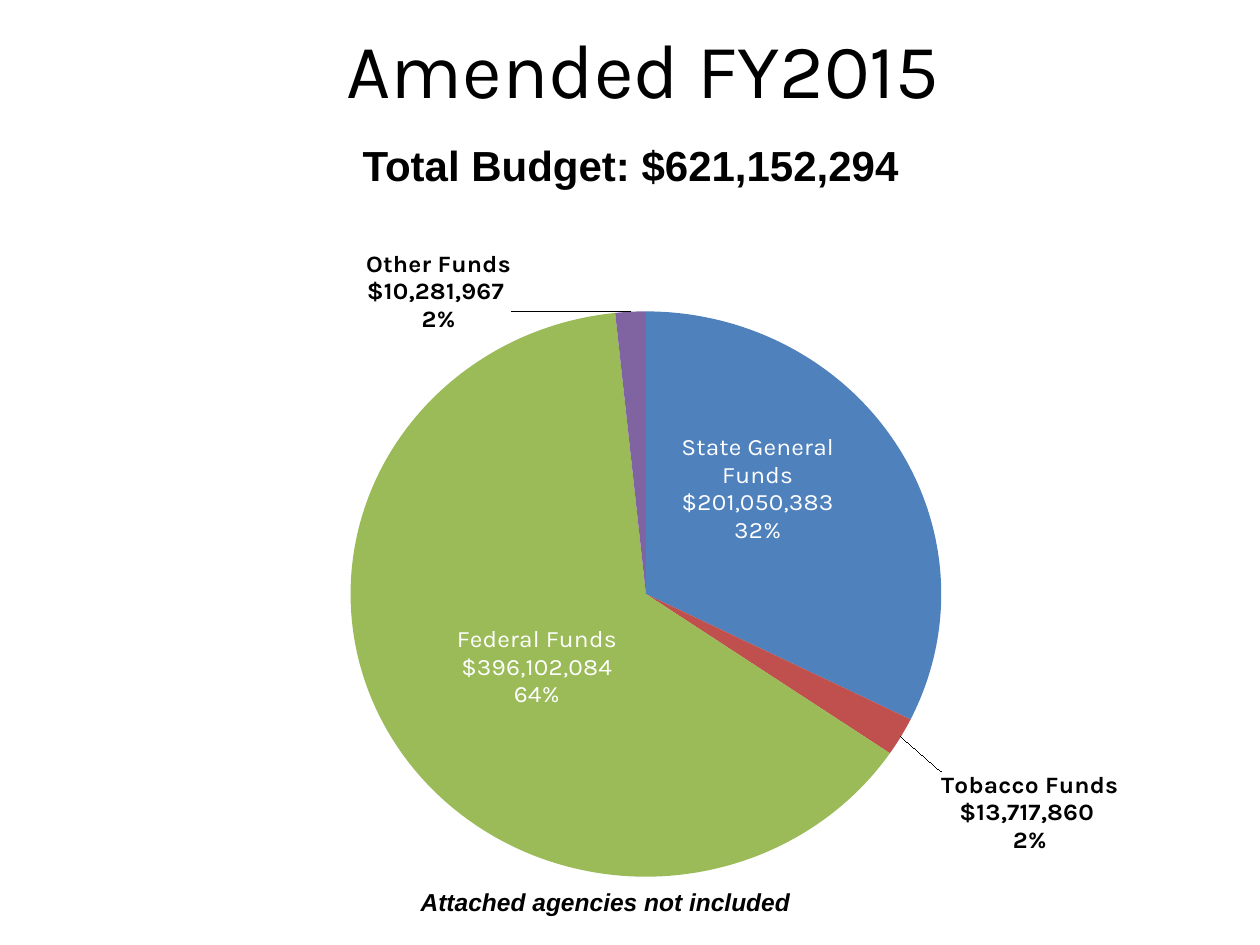
from dataclasses import dataclass

from lxml import etree
from pptx import Presentation
from pptx.chart.data import CategoryChartData
from pptx.dml.color import RGBColor
from pptx.enum.chart import XL_CHART_TYPE, XL_LABEL_POSITION
from pptx.enum.text import MSO_ANCHOR, MSO_AUTO_SIZE, PP_ALIGN
from pptx.oxml.ns import qn
from pptx.util import Cm, Pt

PIE = XL_CHART_TYPE.PIE
BEST_FIT = XL_LABEL_POSITION.BEST_FIT
MIDDLE = MSO_ANCHOR.MIDDLE
FIT_SHAPE, NO_FIT = MSO_AUTO_SIZE.SHAPE_TO_FIT_TEXT, MSO_AUTO_SIZE.NONE
ALIGN_CENTRE = PP_ALIGN.CENTER
TITLE_ONLY = 5
DOLLARS = '"$"#,##0_);[Red]\\("$"#,##0\\)'


@dataclass(frozen=True)
class Theme:
    heading_font: str = "Karla"
    body_font: str = "Arial"
    ink: str = "000000"
    light: str = "FFFFFF"
    title_size: int = 44
    total_size: int = 24
    label_size: int = 14
    chart_size: int = 10


@dataclass(frozen=True)
class Box:
    left: float
    top: float
    width: float
    height: float

    def lengths(self) -> tuple:
        return Cm(self.left), Cm(self.top), Cm(self.width), Cm(self.height)


@dataclass(frozen=True)
class Fund:
    name: str
    amount: int
    colour: str
    label_shift: tuple[float, float]  # share of the chart's width and height
    wording: str = ""  # replaces the automatic label


THEME = Theme()
FUNDS = (
    Fund("State General Funds", 200398486, "4F81BD", (-0.235, 0.16),
         "State General Funds\n$201,050,383\n32%"),
    Fund("Tobacco Funds", 13717860, "C0504D", (0.036, 0.049)),
    Fund("Federal Funds", 395802084, "9BBB59", (0.245, -0.18),
         "Federal Funds\n$396,102,084\n64%"),
    Fund("Other Funds", 10281967, "8064A2", (-0.203, 0.029)),
)


def format_font(font, *, face: str, size: int, colour: str = THEME.ink,
                bold: bool = False, italic: bool = False) -> None:
    font.name, font.size = face, Pt(size)
    font.bold, font.italic = bold, italic
    font.color.rgb = RGBColor.from_string(colour)


def write_text(frame, text: str, *, align=None, **font_format) -> None:
    frame.text = text
    for paragraph in frame.paragraphs:
        if align is not None:
            paragraph.alignment = align
        for run in paragraph.runs:
            format_font(run.font, **font_format)


def add_text(slide, box: Box, text: str, *, wrap: bool, **text_format) -> None:
    frame = slide.shapes.add_textbox(*box.lengths()).text_frame
    frame.word_wrap = wrap
    frame.auto_size = FIT_SHAPE
    write_text(frame, text, **text_format)


def manual_layout(**settings):
    """Return a c:layout element; settings must follow schema order."""
    layout = etree.Element(qn("c:layout"))
    manual = etree.SubElement(layout, qn("c:manualLayout"))
    for tag, value in settings.items():
        etree.SubElement(manual, qn(f"c:{tag}")).set("val", str(value))
    return layout


def show_label_parts(labels) -> None:
    """Show name, value and percentage on separate lines."""
    for tag in ("showCatName", "showVal", "showPercent"):
        labels.find(qn(f"c:{tag}")).set("val", "1")
    separator = etree.Element(qn("c:separator"))
    separator.text = "\n"
    labels.find(qn("c:showBubbleSize")).addnext(separator)


def format_slice(point, fund: Fund) -> None:
    point.format.fill.solid()
    point.format.fill.fore_color.rgb = RGBColor.from_string(fund.colour)
    label = point.data_label
    if fund.wording:
        write_text(label.text_frame, fund.wording, face=THEME.heading_font,
                   size=THEME.label_size, colour=THEME.light)
    else:
        format_font(label.font, face=THEME.heading_font,
                    size=THEME.label_size, bold=True)
    label.position = BEST_FIT


def add_fund_pie(slide, box: Box) -> None:
    data = CategoryChartData(number_format=DOLLARS)
    data.categories = [fund.name for fund in FUNDS]
    data.add_series("Series 1", [fund.amount for fund in FUNDS])
    chart = slide.shapes.add_chart(PIE, *box.lengths(), data).chart
    chart.has_title = False
    chart.has_legend = False
    format_font(chart.font, face=THEME.heading_font, size=THEME.chart_size)

    plot = chart.plots[0]
    plot.vary_by_categories = True
    series = plot.series[0]
    format_font(series.data_labels.font, face=THEME.heading_font,
                size=THEME.label_size)
    for index, fund in enumerate(FUNDS):
        format_slice(series.points[index], fund)

    label_group = series._element.find(qn("c:dLbls"))
    show_label_parts(label_group)
    for fund, label in zip(FUNDS, label_group.findall(qn("c:dLbl"))):
        show_label_parts(label)
        across, down = fund.label_shift
        label.find(qn("c:idx")).addnext(manual_layout(x=across, y=down))

    plot_area = chart._chartSpace.find(qn("c:chart")).find(qn("c:plotArea"))
    for layout in plot_area.findall(qn("c:layout")):
        plot_area.remove(layout)
    plot_area.insert(0, manual_layout(
        layoutTarget="inner", xMode="edge", yMode="edge",
        x=0.161, y=0.094, w=0.673, h=0.875))


def main() -> None:
    deck = Presentation()
    deck.slide_width, deck.slide_height = Cm(25.4), Cm(19.05)
    slide = deck.slides.add_slide(deck.slide_layouts[TITLE_ONLY])

    title = slide.shapes.title
    title.left, title.top, title.width, title.height = Box(
        0.53, 0, 24.87, 2.74).lengths()
    title.text_frame.vertical_anchor = MIDDLE
    title.text_frame.auto_size = NO_FIT
    write_text(title.text_frame, "Amended FY2015", align=ALIGN_CENTRE,
               face=THEME.heading_font, size=THEME.title_size)

    add_text(slide, Box(8.23, 17.75, 7.98, 0.86),
             "Attached agencies not included", wrap=False,
             face=THEME.body_font, size=THEME.label_size,
             bold=True, italic=True)
    add_text(slide, Box(7.06, 2.69, 12.01, 1.3),
             "Total Budget: $621,152,294", wrap=True,
             face=THEME.body_font, size=THEME.total_size, bold=True)
    add_fund_pie(slide, Box(3.56, 4.47, 19.02, 13.61))
    deck.save("out.pptx")


if __name__ == "__main__":
    main()
